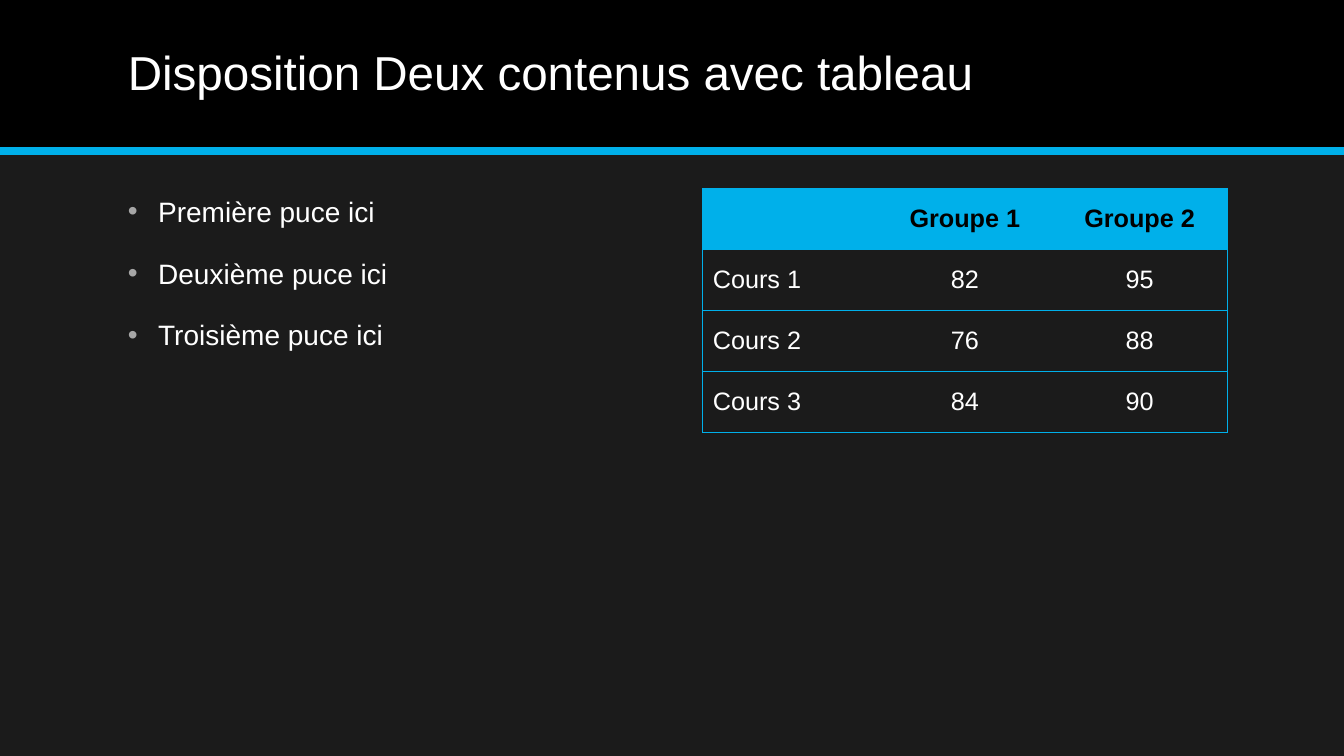
from lxml.etree import SubElement
from pptx import Presentation
from pptx.dml.color import RGBColor
from pptx.enum.shapes import MSO_CONNECTOR as Connector, MSO_SHAPE as Shape
from pptx.enum.text import MSO_ANCHOR as Anchor, PP_ALIGN as Align
from pptx.oxml.ns import qn
from pptx.util import Inches, Pt

# Content
TITLE = "Disposition Deux contenus avec tableau"
BULLETS = ["Première puce ici", "Deuxième puce ici", "Troisième puce ici"]
ROWS = [
    ("", "Groupe 1", "Groupe 2"),
    ("Cours 1", "82", "95"),
    ("Cours 2", "76", "88"),
    ("Cours 3", "84", "90"),
]
COLORS = {"back": "1B1B1B", "band": "000000", "accent": "00B0EA",
          "text": "FFFFFF", "bullet": "A6A6A6"}

# Layout in inches
WIDTH, HEIGHT = 13.33, 7.5
BAND_HEIGHT = 1.5
TITLE_BOX = (1.17, 0.14, 11, 1.2)
BULLET_BOX = (1.17, 1.88, 5.2, 4.88)
TABLE_BOX = (6.97, 1.87, 5.2, 2.42)
INDENT = 0.3


def color(name):
    return RGBColor.from_string(COLORS[name])


def inches(lengths):
    return [Inches(length) for length in lengths]


def set_font(para, size, name, bold=False):
    font = para.font
    font.name, font.size, font.bold = "Arial", Pt(size), bold
    font.color.rgb = color(name)


def add_text_frame(slide, place, anchor):
    frame = slide.shapes.add_textbox(*inches(place)).text_frame
    frame.word_wrap = True
    frame.vertical_anchor = anchor
    return frame


def add_bullet(para):
    props = para._p.get_or_add_pPr()
    props.set("marL", str(Inches(INDENT)))
    props.set("indent", str(-Inches(INDENT)))
    tint = SubElement(props, qn("a:buClr"))
    SubElement(tint, qn("a:srgbClr"), val=COLORS["bullet"])
    SubElement(props, qn("a:buFont"), typeface="Arial")
    SubElement(props, qn("a:buChar"), char="•")


def set_borders(cell, visible):
    props = cell._tc.get_or_add_tcPr()
    for side in "LRTB":
        line = SubElement(props, qn(f"a:ln{side}"), w=str(Pt(0.5)))
        if side in visible:
            fill = SubElement(line, qn("a:solidFill"))
            SubElement(fill, qn("a:srgbClr"), val=COLORS["accent"])
        else:
            SubElement(line, qn("a:noFill"))


deck = Presentation()
deck.slide_width, deck.slide_height = inches((WIDTH, HEIGHT))
slide = deck.slides.add_slide(deck.slide_layouts[6])
slide.background.fill.solid()
slide.background.fill.fore_color.rgb = color("back")

# Title band and accent line
band = slide.shapes.add_shape(Shape.RECTANGLE, *inches((0, 0, WIDTH, BAND_HEIGHT)))
band.shadow.inherit = False
band.fill.solid()
band.fill.fore_color.rgb = color("band")
band.line.fill.background()

rule = slide.shapes.add_connector(
    Connector.STRAIGHT, *inches((0, BAND_HEIGHT, WIDTH, BAND_HEIGHT)))
rule.line.color.rgb = color("accent")
rule.line.width = Pt(6)
SubElement(rule._element.spPr, qn("a:effectLst"))

# Title
title = add_text_frame(slide, TITLE_BOX, Anchor.MIDDLE).paragraphs[0]
title.text = TITLE
title.line_spacing = 0.9
set_font(title, 34, "text")

# Bullets
frame = add_text_frame(slide, BULLET_BOX, Anchor.TOP)
for index, text in enumerate(BULLETS):
    para = frame.add_paragraph() if index else frame.paragraphs[0]
    para.text = text
    para.space_before = Pt(20)
    set_font(para, 20, "text")
    add_bullet(para)

# Table
columns = len(ROWS[0])
table = slide.shapes.add_table(len(ROWS), columns, *inches(TABLE_BOX)).table
for r, row in enumerate(ROWS):
    for c, text in enumerate(row):
        cell = table.cell(r, c)
        cell.vertical_anchor = Anchor.MIDDLE
        para = cell.text_frame.paragraphs[0]
        para.text = text
        para.alignment = Align.CENTER if c else Align.LEFT
        set_font(para, 18, "text" if r else "band", bold=r == 0)
        left = "L" if c == 0 else ""
        right = "R" if c == columns - 1 else ""
        set_borders(cell, "TB" + left + right)
        if r:
            cell.fill.background()
        else:
            cell.fill.solid()
            cell.fill.fore_color.rgb = color("accent")

deck.save("out.pptx")
